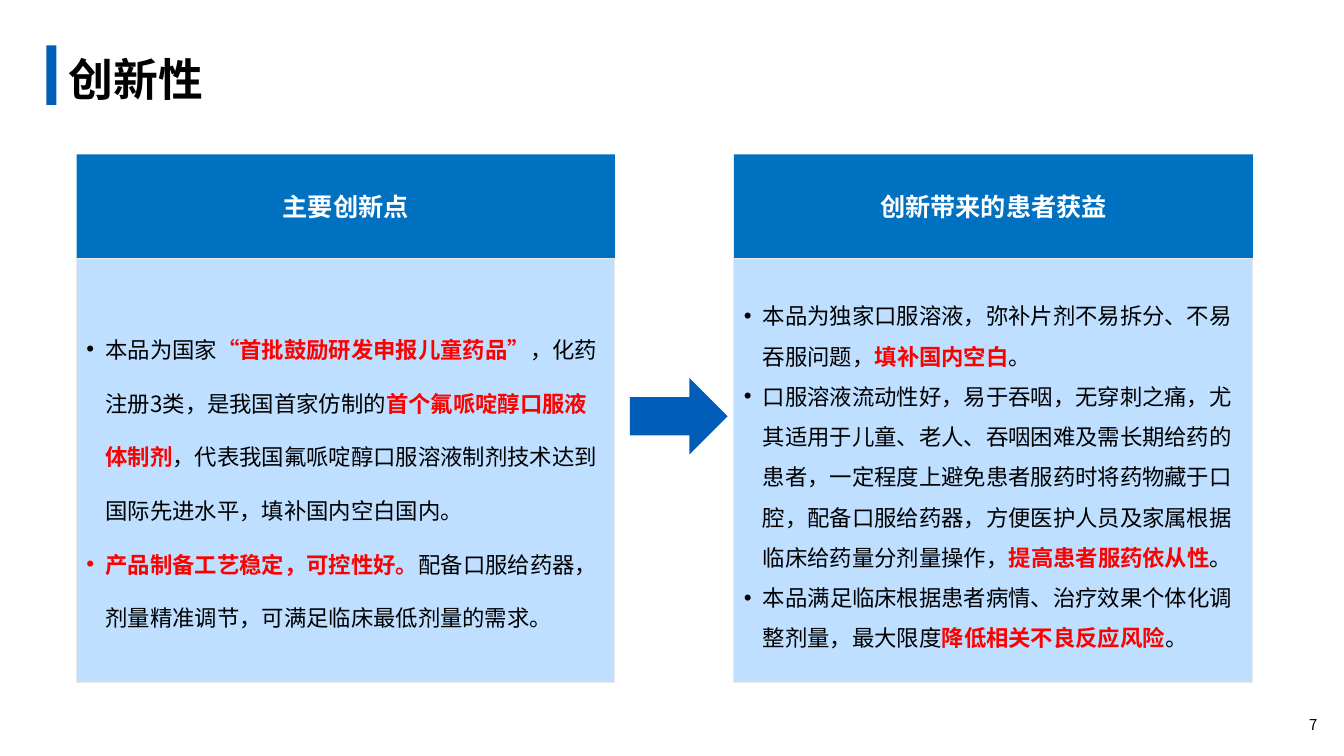
from dataclasses import dataclass

from lxml.etree import SubElement
from pptx import Presentation
from pptx.dml.color import RGBColor
from pptx.enum.shapes import MSO_SHAPE
from pptx.enum.text import MSO_ANCHOR, PP_ALIGN
from pptx.oxml.ns import qn
from pptx.shapes.autoshape import Shape
from pptx.slide import Slide
from pptx.text.text import TextFrame, _Paragraph
from pptx.util import Pt


@dataclass(frozen=True)
class Theme:
    accent: str = "005EB8"
    header: str = "0070C0"
    panel: str = "BEDFFF"
    border: str = "E9E9E9"
    ink: str = "000000"
    light: str = "FFFFFF"
    highlight: str = "FF0000"
    title_size: float = 32
    header_size: float = 18
    body_size: float = 16
    number_size: float = 10.7
    font: str = "Noto Sans CJK SC"
    number_font: str = "Noto Sans CJK JP"


@dataclass(frozen=True)
class Box:
    left: float
    top: float
    width: float
    height: float

    def lengths(self) -> tuple[Pt, Pt, Pt, Pt]:
        return Pt(self.left), Pt(self.top), Pt(self.width), Pt(self.height)


@dataclass(frozen=True)
class Phrase:
    text: str
    key: bool = False


@dataclass(frozen=True)
class Panel:
    heading: str
    left: float
    width: float
    spacing: float
    points: tuple[tuple[Phrase, ...], ...]


THEME = Theme()
HEADER_TOP, HEADER_HEIGHT, BODY_HEIGHT = 110.2, 74.1, 303.1
BULLET_INDENT = 13.7

PANELS = (
    Panel("主要创新点", 54.7, 384.5, 2.0, (
        (
            Phrase("本品为国家"),
            Phrase("“首批鼓励研发申报儿童药品”", True),
            Phrase("，化药注册3类，是我国首家仿制的"),
            Phrase("⾸个氟哌啶醇⼝服液体制剂", True),
            Phrase("，代表我国氟哌啶醇口服溶液制剂技术达到国际先进水平，填补国内空白国内。"),
        ),
        (
            Phrase("产品制备⼯艺稳定，可控性好。", True),
            Phrase("配备口服给药器，剂量精准调节，可满⾜临床最低剂量的需求。"),
        ),
    )),
    Panel("创新带来的患者获益", 524.2, 370.8, 1.5, (
        (
            Phrase("本品为独家口服溶液，弥补片剂不易拆分、不易吞服问题，"),
            Phrase("填补国内空白", True),
            Phrase("。"),
        ),
        (
            Phrase("口服溶液流动性好，易于吞咽，无穿刺之痛，尤其适用于儿童、老人、吞咽困难及需长期给药的"
                   "患者，一定程度上避免患者服药时将药物藏于口腔，配备口服给药器，方便医护人员及家属根据"
                   "临床给药量分剂量操作，"),
            Phrase("提高患者服药依从性", True),
            Phrase("。"),
        ),
        (
            Phrase("本品满足临床根据患者病情、治疗效果个体化调整剂量，最大限度"),
            Phrase("降低相关不良反应风险", True),
            Phrase("。"),
        ),
    )),
)


def apply_format(target: object, values: dict[str, object]) -> None:
    for attribute, value in values.items():
        setattr(target, attribute, value)


def add_phrase(paragraph: _Paragraph, text: str, size: float, color: str,
               bold: bool = False, typeface: str = THEME.font) -> None:
    run = paragraph.add_run()
    run.text = text
    apply_format(run.font, {"size": Pt(size), "bold": bold, "name": typeface})
    run.font.color.rgb = RGBColor.from_string(color)
    SubElement(run.font._element, qn("a:ea"), typeface=typeface)


def add_block(slide: Slide, preset: MSO_SHAPE, box: Box, fill: str, border: str = "") -> Shape:
    block = slide.shapes.add_shape(preset, *box.lengths())
    block.shadow.inherit = False
    block.fill.solid()
    block.fill.fore_color.rgb = RGBColor.from_string(fill)
    if border:
        block.line.color.rgb = RGBColor.from_string(border)
        block.line.width = Pt(0.75)
    else:
        block.line.fill.background()
    return block


def prepare_frame(frame: TextFrame, **margins: Pt) -> TextFrame:
    apply_format(frame, {"word_wrap": True, "vertical_anchor": MSO_ANCHOR.MIDDLE, **margins})
    return frame


def add_label(slide: Slide, box: Box, **margins: Pt) -> _Paragraph:
    label = slide.shapes.add_textbox(*box.lengths())
    return prepare_frame(label.text_frame, **margins).paragraphs[0]


def add_bullet(paragraph: _Paragraph) -> None:
    properties = paragraph._p.get_or_add_pPr()
    indent = Pt(BULLET_INDENT)
    properties.set("marL", str(indent))
    properties.set("indent", str(-indent))
    SubElement(properties, qn("a:buFont"), typeface="Arial")
    SubElement(properties, qn("a:buChar"), char="•")


def add_panel(slide: Slide, panel: Panel) -> None:
    header = add_block(slide, MSO_SHAPE.RECTANGLE,
                       Box(panel.left, HEADER_TOP, panel.width, HEADER_HEIGHT), THEME.header)
    heading = prepare_frame(header.text_frame).paragraphs[0]
    heading.alignment = PP_ALIGN.CENTER
    add_phrase(heading, panel.heading, THEME.header_size, THEME.light, True)

    body = add_block(slide, MSO_SHAPE.RECTANGLE,
                     Box(panel.left, HEADER_TOP + HEADER_HEIGHT, panel.width, BODY_HEIGHT),
                     THEME.panel, THEME.border)
    frame = prepare_frame(body.text_frame)
    for index, phrases in enumerate(panel.points):
        point = frame.add_paragraph() if index else frame.paragraphs[0]
        add_bullet(point)
        apply_format(point, {"alignment": PP_ALIGN.LEFT, "line_spacing": panel.spacing})
        for phrase in phrases:
            color = THEME.highlight if phrase.key else THEME.ink
            add_phrase(point, phrase.text, THEME.body_size, color, phrase.key)


def main() -> None:
    deck = Presentation()
    apply_format(deck, {"slide_width": Pt(960), "slide_height": Pt(540)})
    slide = deck.slides.add_slide(deck.slide_layouts[6])

    add_block(slide, MSO_SHAPE.RECTANGLE, Box(33.1, 32.4, 7.2, 42.5), THEME.accent)

    page_number = add_label(slide, Box(902.2, 503.3, 48.2, 28.8),
                            margin_left=Pt(9.4), margin_right=Pt(9.4),
                            margin_top=Pt(5), margin_bottom=Pt(5))
    page_number.alignment = PP_ALIGN.RIGHT
    add_phrase(page_number, "7", THEME.number_size, THEME.ink, typeface=THEME.number_font)

    title = add_label(slide, Box(41.8, 32.4, 777.6, 46.8))
    add_phrase(title, "创新性", THEME.title_size, THEME.ink, True)

    for panel in PANELS:
        add_panel(slide, panel)

    add_block(slide, MSO_SHAPE.RIGHT_ARROW, Box(450, 270, 69.8, 54.7), THEME.accent)
    deck.save("out.pptx")


if __name__ == "__main__":
    main()
